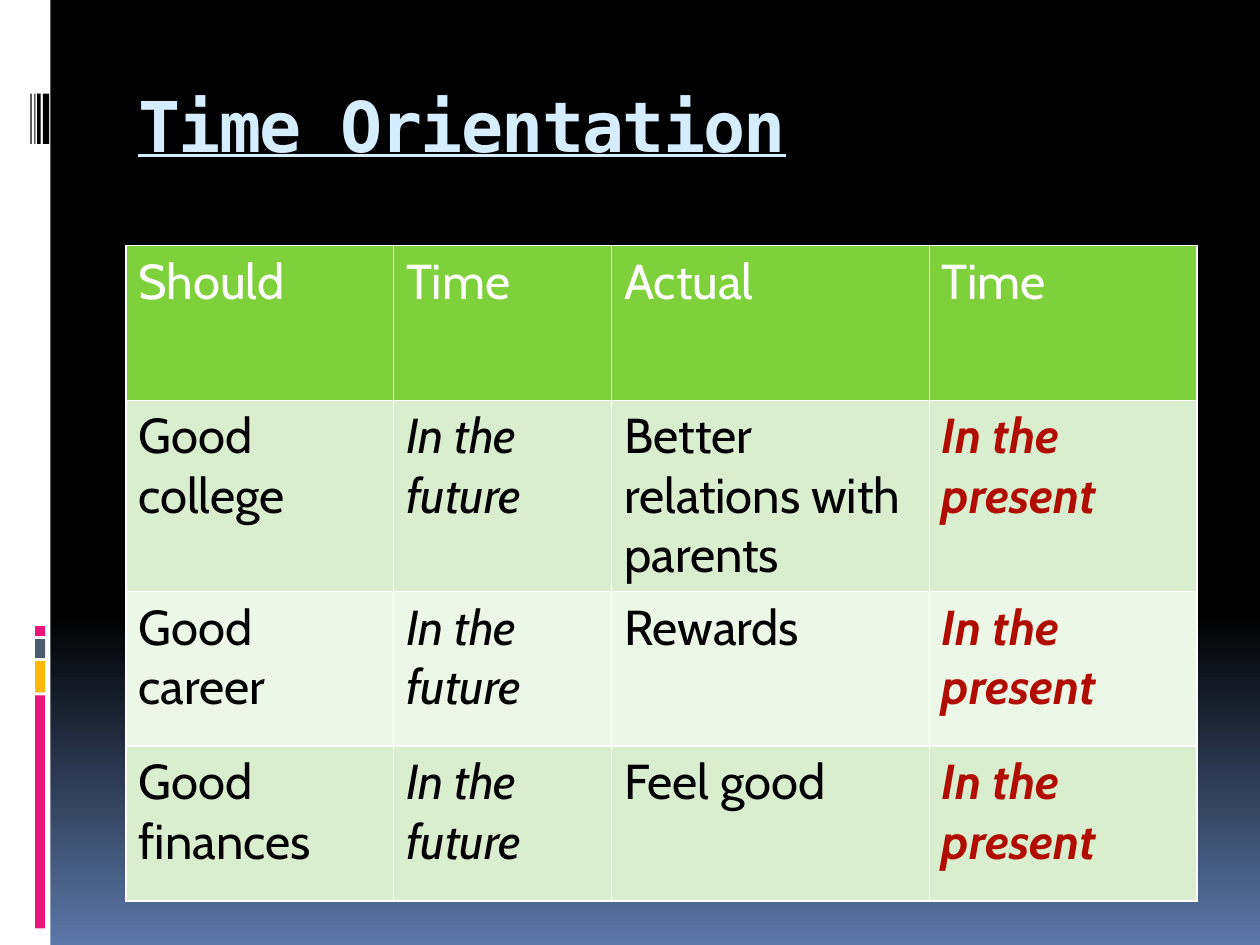
from copy import deepcopy

from lxml import etree
from pptx import Presentation
from pptx.dml.color import RGBColor
from pptx.enum.shapes import MSO_SHAPE
from pptx.enum.text import MSO_ANCHOR
from pptx.oxml.ns import qn
from pptx.util import Pt

RECT = MSO_SHAPE.RECTANGLE
TOP = MSO_ANCHOR.TOP

WHITE, BLACK = "FFFFFF", "000000"
PINK, AMBER, SLATE = "EA157A", "FEB80A", "4E5B6F"
GREEN, LIGHT_GREEN, PALE_GREEN = "7FD13B", "D8EECE", "ECF7E8"
RED, ICE = "B00D00", "D6ECFF"


def rgb(value):
    return RGBColor.from_string(value)


class SlideBuilder:
    body_font = "Cabin"
    title_font = "DejaVu Sans Mono"
    body_size = 28
    title_size = 40

    def __init__(self, slide):
        self.slide = slide

    def background(self, stops):
        """Fill the background from top to bottom; stops are (percent, colour)."""
        fill = self.slide.background.fill
        fill.gradient()
        fill.gradient_angle = 270
        first = fill.gradient_stops[0]._gs
        while len(fill.gradient_stops) < len(stops):
            first.addnext(deepcopy(first))
        for stop, (percent, colour) in zip(fill.gradient_stops, stops):
            stop.position = percent / 100
            stop.color.rgb = rgb(colour)

    def bar(self, left, top, width, height, colour):
        sp = self.slide.shapes.add_shape(
            RECT, Pt(left), Pt(top), Pt(width), Pt(height))
        sp.shadow.inherit = False
        sp.fill.solid()
        sp.fill.fore_color.rgb = rgb(colour)
        sp.line.fill.background()

    def run(self, p, text, font, size, colour, bold=False, italic=False):
        r = p.add_run()
        r.text = text
        r.font.name = font
        r.font.size = Pt(size)
        r.font.color.rgb = rgb(colour)
        r.font.bold = bold
        r.font.italic = italic
        return r

    def title(self, left, top, width, height, text):
        sp = self.slide.shapes.add_textbox(
            Pt(left), Pt(top), Pt(width), Pt(height))
        tf = sp.text_frame
        tf.word_wrap = True
        tf.vertical_anchor = TOP
        tf.margin_top = Pt(7)
        r = self.run(tf.paragraphs[0], text, self.title_font,
                     self.title_size, ICE, bold=True)
        r.font.underline = True
        r.font._element.set("spc", "-100")

    def cell_borders(self, cell, colour, width):
        tcPr = cell._tc.get_or_add_tcPr()
        for i, side in enumerate(("a:lnL", "a:lnR", "a:lnT", "a:lnB")):
            ln = etree.Element(qn(side), w=str(Pt(width)))
            fill = etree.SubElement(ln, qn("a:solidFill"))
            etree.SubElement(fill, qn("a:srgbClr"), val=colour)
            tcPr.insert(i, ln)

    def table(self, left, top, widths, heights, rows, fills, styles):
        """Draw rows under a white-text header; styles hold one dict per column."""
        table = self.slide.shapes.add_table(
            len(rows), len(widths), Pt(left), Pt(top),
            Pt(sum(widths)), Pt(sum(heights))).table
        for column, width in zip(table.columns, widths):
            column.width = Pt(width)
        for i, (texts, height, colour) in enumerate(zip(rows, heights, fills)):
            table.rows[i].height = Pt(height)
            for j, text in enumerate(texts):
                cell = table.cell(i, j)
                cell.fill.solid()
                cell.fill.fore_color.rgb = rgb(colour)
                self.cell_borders(cell, WHITE, 1)
                style = styles[j] if i else {"colour": WHITE}
                self.run(cell.text_frame.paragraphs[0], text,
                         self.body_font, self.body_size, **style)


def main():
    prs = Presentation()
    prs.slide_width, prs.slide_height = Pt(720), Pt(540)
    s = SlideBuilder(prs.slides.add_slide(prs.slide_layouts[6]))

    s.background([(0, BLACK), (65, BLACK), (100, "5B77A8")])
    s.bar(0, 0, 28.8, 540, WHITE)
    for top, height, colour in [(397.4, 133.2, PINK), (377.7, 18, AMBER),
                                (365.2, 10.8, SLATE), (357.8, 5.7, PINK)]:
        s.bar(20, top, 5.8, height, colour)
    for left, width in [(24.5, 3.6), (21.2, 2), (19.6, 0.7), (17.4, 0.7)]:
        s.bar(left, 53.5, width, 28.8, BLACK)

    s.title(72, 40.3, 612, 72, "Time Orientation")

    future, present = "In the future", "In the present"
    plans = [("Good college", "Better relations with parents"),
             ("Good career", "Rewards"),
             ("Good finances", "Feel good")]
    rows = [("Should", "Time", "Actual", "Time")]
    rows += [(should, future, actual, present) for should, actual in plans]
    plain = {"colour": BLACK}
    s.table(72, 140.4, [152.9, 124.7, 181.5, 152.9], [88.4, 109.2, 88.4, 88.4],
            rows, [GREEN, LIGHT_GREEN, PALE_GREEN, LIGHT_GREEN],
            [plain, {"colour": BLACK, "italic": True}, plain,
             {"colour": RED, "bold": True, "italic": True}])

    prs.save("out.pptx")


if __name__ == "__main__":
    main()
